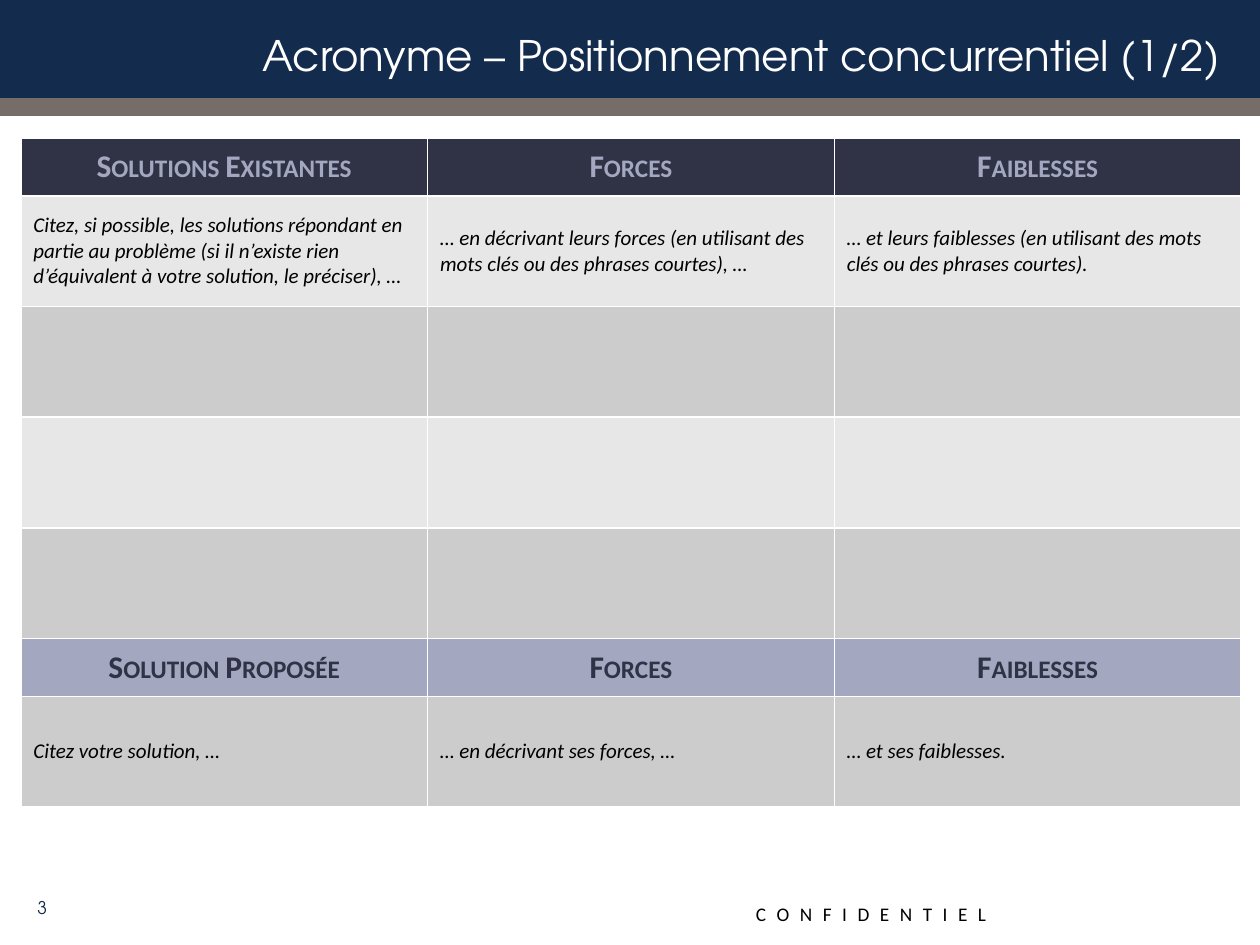
from lxml.etree import SubElement
from pptx import Presentation
from pptx.dml.color import RGBColor
from pptx.enum.shapes import MSO_SHAPE
from pptx.enum.text import MSO_ANCHOR, PP_ALIGN
from pptx.oxml.ns import qn
from pptx.util import Cm, Pt

COLORS = {
    "navy": "132C4D",
    "taupe": "766C68",
    "ink": "303346",
    "lavender": "A3A7C0",
    "light": "E7E7E7",
    "grey": "CCCCCC",
    "white": "FFFFFF",
    "black": "000000",
}
TITLE_FONT = "TeX Gyre Adventor"
BODY_FONT = "Calibri"


def add_run(paragraph, text, font_name, size, color):
    run = paragraph.add_run()
    run.text = text
    run.font.name = font_name
    run.font.size = Pt(size)
    run.font.color.rgb = RGBColor.from_string(COLORS[color])
    return run


def add_borders(cell):
    """Draw a thin white line on the four sides; call before filling the cell."""
    properties = cell._tc.get_or_add_tcPr()
    for side in ("a:lnL", "a:lnR", "a:lnT", "a:lnB"):
        line = SubElement(properties, qn(side), w=str(Pt(1)))
        fill = SubElement(line, qn("a:solidFill"))
        SubElement(fill, qn("a:srgbClr"), val=COLORS["white"])


presentation = Presentation()
presentation.slide_width = Cm(25.4)
presentation.slide_height = Cm(19.05)
slide = presentation.slides.add_slide(presentation.slide_layouts[5])

# Header bands, placed behind the title
bands = [("navy", 0, 2.29), ("taupe", 1.98, 0.36)]
for position, (color, top, height) in enumerate(bands):
    band = slide.shapes.add_shape(
        MSO_SHAPE.RECTANGLE, Cm(0), Cm(top), presentation.slide_width, Cm(height)
    )
    band.shadow.inherit = False
    band.fill.solid()
    band.fill.fore_color.rgb = RGBColor.from_string(COLORS[color])
    band.line.fill.background()
    slide.shapes._spTree.insert(2 + position, band._element)

# Title
title = slide.shapes.title
title.left, title.top, title.width, title.height = Cm(0.38), Cm(0.36), Cm(24.46), Cm(1.47)
title.text_frame.vertical_anchor = MSO_ANCHOR.MIDDLE
paragraph = title.text_frame.paragraphs[0]
paragraph.alignment = PP_ALIGN.RIGHT
add_run(paragraph, "Acronyme – Positionnement concurrentiel (1/2)", TITLE_FONT, 24, "white")

# Footer
confidential = slide.shapes.add_textbox(Cm(14.99), Cm(18.06), Cm(5.41), Cm(0.74))
confidential.text_frame.word_wrap = False
run = add_run(
    confidential.text_frame.paragraphs[0], "CONFIDENTIEL", BODY_FONT, 11, "black"
)
run._r.get_or_add_rPr().set("spc", "600")

page_number = slide.shapes.add_textbox(Cm(-0.1), Cm(17.78), Cm(1.3), Cm(1.02))
page_number.text_frame.word_wrap = True
page_number.text_frame.vertical_anchor = MSO_ANCHOR.MIDDLE
paragraph = page_number.text_frame.paragraphs[0]
paragraph.alignment = PP_ALIGN.RIGHT
add_run(paragraph, "3", TITLE_FONT, 10, "navy")

# Comparison table: fill, heading colour (None for a body row), texts
EMPTY = ("", "", "")
rows = [
    ("ink", "lavender", ("Solutions Existantes", "Forces", "Faiblesses")),
    ("light", None, (
        "Citez, si possible, les solutions répondant en partie au problème "
        "(si il n’existe rien d’équivalent à votre solution, le préciser), …",
        "… en décrivant leurs forces (en utilisant des mots clés ou des phrases courtes), …",
        "… et leurs faiblesses (en utilisant des mots clés ou des phrases courtes).",
    )),
    ("grey", None, EMPTY),
    ("light", None, EMPTY),
    ("grey", None, EMPTY),
    ("lavender", "ink", ("Solution Proposée", "Forces", "Faiblesses")),
    ("grey", None, (
        "Citez votre solution, …",
        "… en décrivant ses forces, …",
        "… et ses faiblesses.",
    )),
]
table = slide.shapes.add_table(
    len(rows), 3, Cm(0.42), Cm(2.78), Cm(24.6), Cm(13.49)
).table
table.first_row = False
table.horz_banding = False
for column in table.columns:
    column.width = Cm(8.2)

for row_index, (fill, heading_color, texts) in enumerate(rows):
    table.rows[row_index].height = Cm(1.17 if heading_color else 2.23)
    for column_index, text in enumerate(texts):
        cell = table.cell(row_index, column_index)
        add_borders(cell)
        cell.fill.solid()
        cell.fill.fore_color.rgb = RGBColor.from_string(COLORS[fill])
        cell.vertical_anchor = MSO_ANCHOR.MIDDLE
        if not text:
            continue
        paragraph = cell.text_frame.paragraphs[0]
        if heading_color:
            paragraph.alignment = PP_ALIGN.CENTER
            run = add_run(paragraph, text, BODY_FONT, 18, heading_color)
            run.font.bold = True
            run._r.get_or_add_rPr().set("cap", "small")
        else:
            run = add_run(paragraph, text, BODY_FONT, 12, "black")
            run.font.italic = True

presentation.save("out.pptx")
